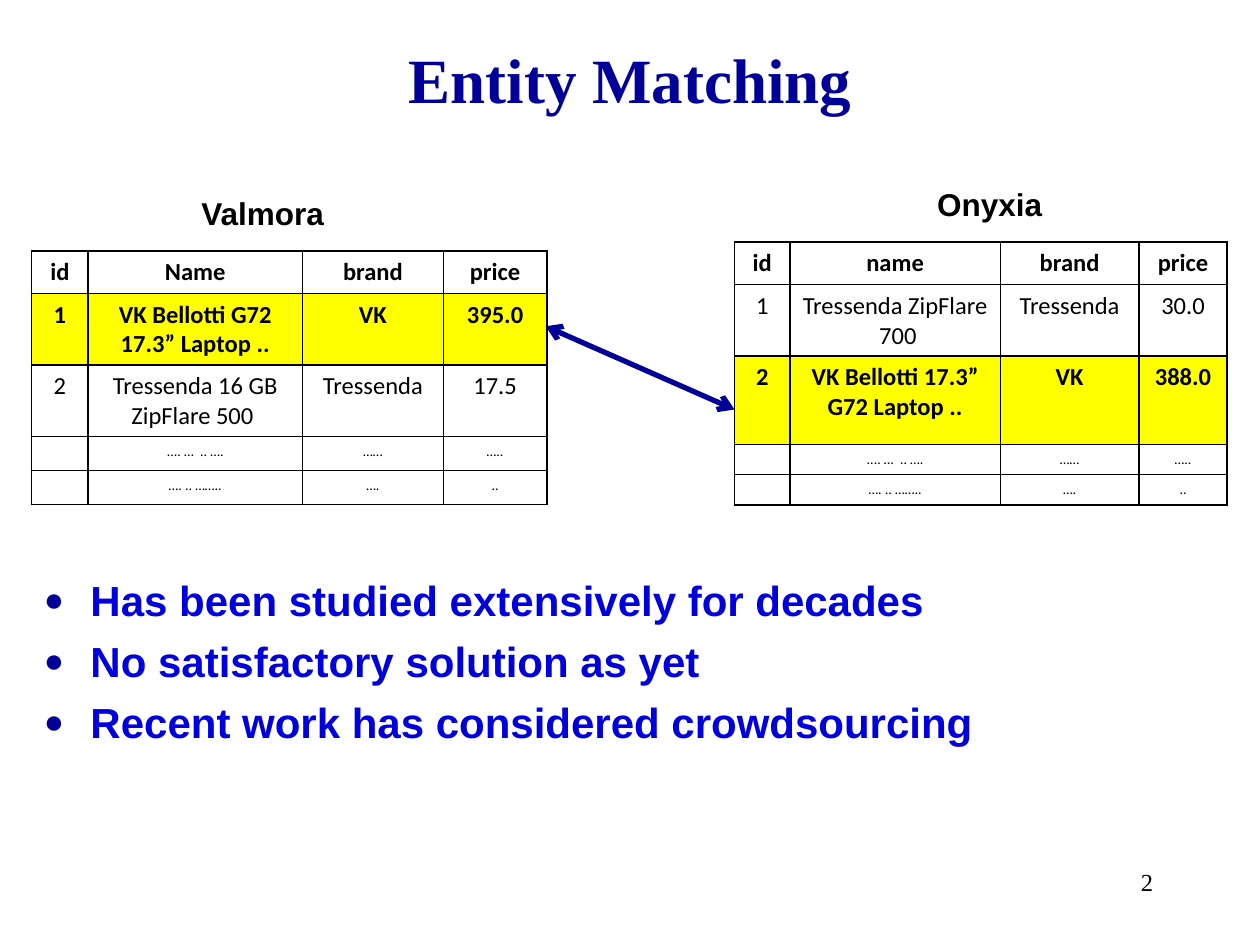
from dataclasses import dataclass

from lxml.etree import SubElement
from pptx import Presentation
from pptx.dml.color import RGBColor
from pptx.enum.shapes import MSO_CONNECTOR
from pptx.enum.text import MSO_ANCHOR, MSO_AUTO_SIZE, PP_ALIGN
from pptx.oxml import parse_xml
from pptx.oxml.ns import nsdecls, qn
from pptx.util import Inches, Pt


@dataclass(frozen=True)
class Theme:
    navy: str = "000099"
    blue: str = "0000DC"
    black: str = "000000"
    yellow: str = "FFFF00"
    serif: str = "Times New Roman"
    sans: str = "Arial"
    table: str = "Calibri"
    title_size: int = 36
    bullet_size: int = 24
    label_size: int = 18
    body_size: int = 14
    small_size: int = 8


theme = Theme()


def format_text(tf, font, size, color, bold=False, align=PP_ALIGN.LEFT):
    tf.word_wrap = True
    for p in tf.paragraphs:
        p.alignment = align
        for r in p.runs:
            r.font.name = font
            r.font.size = Pt(size)
            r.font.bold = bold
            r.font.color.rgb = RGBColor.from_string(color)


def add_text(box, text, *style):
    sp = slide.shapes.add_textbox(*map(Inches, box))
    sp.text_frame.text = text
    format_text(sp.text_frame, *style)
    return sp.text_frame


prs = Presentation()
prs.slide_width, prs.slide_height = Inches(10), Inches(7.5)
slide = prs.slides.add_slide(prs.slide_layouts[5])

title = slide.shapes.title
title.left, title.top, title.width, title.height = map(Inches, (0.75, 0.25, 8.5, 0.75))
tf = title.text_frame
tf.text = "Entity Matching"
tf.auto_size = MSO_AUTO_SIZE.NONE
tf.vertical_anchor = MSO_ANCHOR.MIDDLE
format_text(tf, theme.serif, theme.title_size, theme.navy, True, PP_ALIGN.CENTER)

bullets = [
    "Has been studied extensively for decades",
    "No satisfactory solution as yet",
    "Recent work has considered crowdsourcing",
]
tf = add_text((0.25, 4.51, 9.5, 1.82), "\n".join(bullets),
              theme.sans, theme.bullet_size, theme.blue, True)
for p in tf.paragraphs:
    p.space_before = Pt(6)
    pPr = p._p.get_or_add_pPr()
    pPr.set("marL", str(Inches(0.37)))
    pPr.set("indent", str(-Inches(0.37)))
    color = SubElement(pPr, qn("a:buClr"))
    SubElement(color, qn("a:srgbClr"), val=theme.navy)
    SubElement(pPr, qn("a:buSzPct"), val="80000")
    SubElement(pPr, qn("a:buFont"), typeface=theme.sans)
    SubElement(pPr, qn("a:buChar"), char="●")

add_text((7.17, 6.83, 2.08, 0.5), "2",
         theme.serif, theme.body_size, theme.black, False, PP_ALIGN.RIGHT)

for label, box in [("Valmora", (1.25, 1.49, 1.67, 0.4)), ("Onyxia", (7.17, 1.42, 1.37, 0.4))]:
    add_text(box, label, theme.sans, theme.label_size, theme.black, True, PP_ALIGN.CENTER)

line = slide.shapes.add_connector(
    MSO_CONNECTOR.STRAIGHT, *map(Inches, (4.33, 2.59, 5.83, 3.25)))
line.line.color.rgb = RGBColor.from_string(theme.navy)
line.line.width = Pt(3)
ln = line.line._get_or_add_ln()
for end in ("a:headEnd", "a:tailEnd"):
    SubElement(ln, qn(end), type="arrow")
SubElement(line._element.spPr, qn("a:effectLst"))

elided_rows = [
    ["", ".... …  .. ….", "……", "….."],
    ["", "…. .. ……..", "….", ".."],
]
tables = [
    ((0.25, 1.99), [0.45, 1.7, 1.12, 0.82], [0.34, 0.56, 0.56, 0.27, 0.27], 1, [
        ["id", "Name", "brand", "price"],
        ["1", "VK Bellotti G72 17.3” Laptop ..", "VK", "395.0"],
        ["2", "Tressenda 16 GB ZipFlare 500 ", "Tressenda", "17.5"],
    ]),
    ((5.83, 1.92), [0.44, 1.67, 1.1, 0.7], [0.34, 0.56, 0.7, 0.24, 0.24], 2, [
        ["id", "name", "brand", "price"],
        ["1", "Tressenda ZipFlare  700", "Tressenda", "30.0"],
        ["2", "VK Bellotti 17.3” G72 Laptop ..", "VK", "388.0"],
    ]),
]
for (left, top), widths, heights, match, records in tables:
    rows = records + elided_rows
    frame = slide.shapes.add_table(
        len(rows), len(widths), *map(Inches, (left, top, sum(widths), sum(heights))))
    table = frame.table
    table.first_row = table.horz_banding = False
    for column, width in zip(table.columns, widths):
        column.width = Inches(width)
    for i, (row, height) in enumerate(zip(rows, heights)):
        table.rows[i].height = Inches(height)
        size = theme.body_size if i < len(records) else theme.small_size
        for j, text in enumerate(row):
            cell = table.cell(i, j)
            cell.text = text
            format_text(cell.text_frame, theme.table, size, theme.black,
                        i in (0, match), PP_ALIGN.CENTER)
            if not text:
                SubElement(cell.text_frame.paragraphs[0]._p, qn("a:endParaRPr"),
                           sz=str(size * 100))
            tcPr = cell._tc.get_or_add_tcPr()
            for side in "LRTB":
                tcPr.append(parse_xml(
                    f'<a:ln{side} {nsdecls("a")} w="{Pt(1)}"><a:solidFill>'
                    f'<a:srgbClr val="{theme.black}"/></a:solidFill></a:ln{side}>'))
            if i == match:
                cell.fill.solid()
                cell.fill.fore_color.rgb = RGBColor.from_string(theme.yellow)
            else:
                cell.fill.background()

prs.save("out.pptx")
